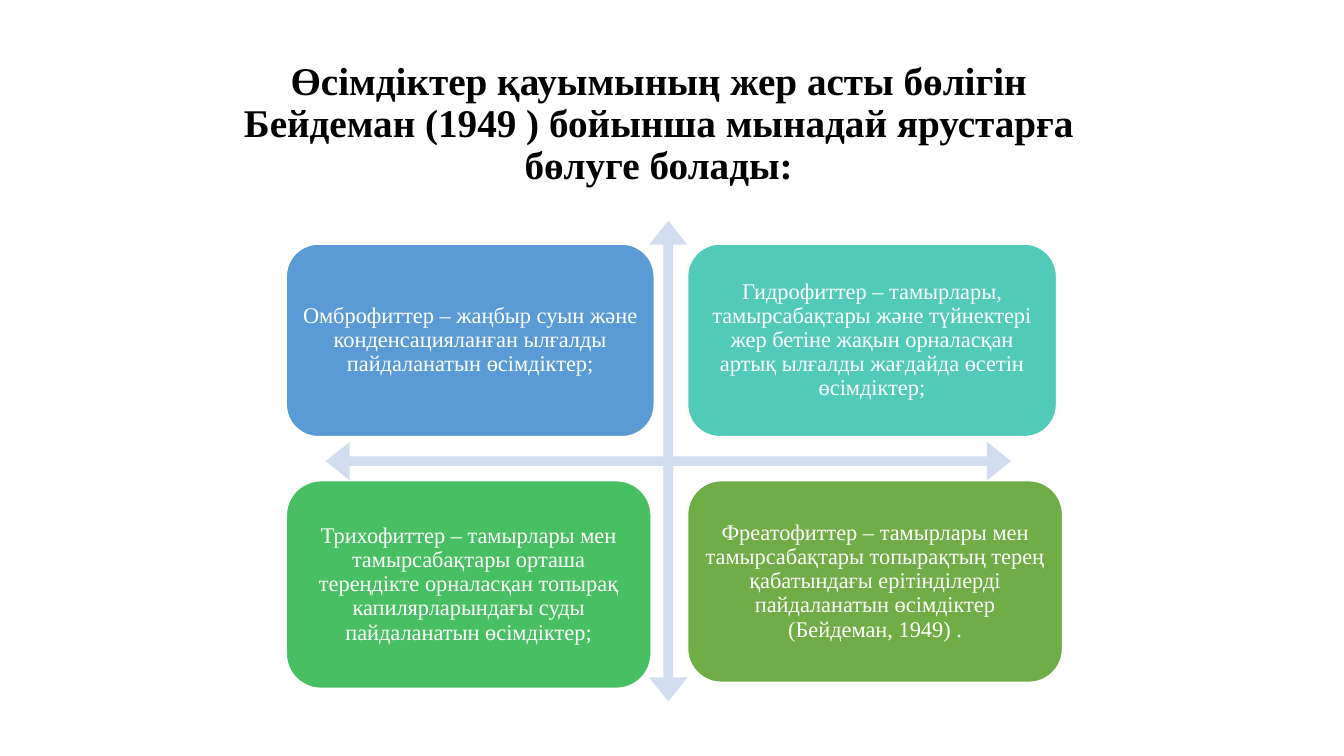
from pptx import Presentation
from pptx.dml.color import RGBColor
from pptx.enum import shapes, text
from pptx.util import Pt

WHITE = RGBColor(0xFF, 0xFF, 0xFF)
BLACK = RGBColor(0x00, 0x00, 0x00)
PALE = RGBColor(0xD2, 0xDE, 0xEF)
BLUE = RGBColor(0x5B, 0x9B, 0xD5)
TEAL = RGBColor(0x52, 0xCA, 0xB8)
GREEN = RGBColor(0x49, 0xBF, 0x64)
OLIVE = RGBColor(0x70, 0xAD, 0x47)

LEFT, RIGHT, TOP, BOTTOM = 204.5, 491.2, 174.4, 343.4
TITLE = ("Өсімдіктер қауымының жер асты бөлігін Бейдеман (1949 ) "
         "бойынша мынадай ярустарға бөлуге болады:")
TIERS = [
    (LEFT, TOP, 262.8, 137.5, BLUE,
     "Омброфиттер – жаңбыр суын және конденсацияланған ылғалды "
     "пайдаланатын өсімдіктер;"),
    (RIGHT, TOP, 263.5, 137.5, TEAL,
     "Гидрофиттер – тамырлары, тамырсабақтары және түйнектері жер бетіне "
     "жақын орналасқан артық ылғалды жағдайда өсетін өсімдіктер;"),
    (LEFT, BOTTOM, 260.6, 148.3, GREEN,
     "Трихофиттер – тамырлары мен тамырсабақтары орташа тереңдікте "
     "орналасқан топырақ капилярларындағы суды пайдаланатын өсімдіктер;"),
    (RIGHT, BOTTOM, 267.8, 144, OLIVE,
     "Фреатофиттер – тамырлары мен тамырсабақтары топырақтың терең "
     "қабатындағы ерітінділерді пайдаланатын өсімдіктер (Бейдеман, 1949) ."),
]


def set_attrs(target, values):
    for name, value in values.items():
        setattr(target, name, value)


def write(sp, words, size, color, bold, insets):
    tf = sp.text_frame
    left, top, right, bottom = map(Pt, insets)
    set_attrs(tf, {
        "word_wrap": True, "auto_size": text.MSO_AUTO_SIZE.NONE,
        "vertical_anchor": text.MSO_ANCHOR.MIDDLE,
        "margin_left": left, "margin_top": top,
        "margin_right": right, "margin_bottom": bottom,
    })
    p = tf.paragraphs[0]
    set_attrs(p, {"alignment": text.PP_ALIGN.CENTER, "line_spacing": 0.9})
    r = p.add_run()
    r.text = words
    set_attrs(r.font, {"name": "Times New Roman", "size": Pt(size), "bold": bold})
    r.font.color.rgb = color


def add_block(s, kind, box, fill):
    sp = s.shapes.add_shape(kind, *map(Pt, box))
    sp.shadow.inherit = False
    sp.fill.solid()
    sp.fill.fore_color.rgb = fill
    return sp


def add_title(s):
    sp = s.shapes.title
    set_attrs(sp, {"left": Pt(136.8), "top": Pt(44.6),
                   "width": Pt(667.4), "height": Pt(119.5)})
    write(sp, TITLE, 28, BLACK, True, (14, 3.6, 14, 34))


def add_axes(s):
    sp = add_block(s, shapes.MSO_SHAPE.QUAD_ARROW, (232.6, 157.7, 489.6, 343.4), PALE)
    sp.line.fill.background()
    for i, value in enumerate((0.02, 0.04, 0.05)):
        sp.adjustments[i] = value


def add_tier(s, left, top, width, height, fill, words):
    sp = add_block(s, shapes.MSO_SHAPE.ROUNDED_RECTANGLE,
                   (left, top, width, height), fill)
    sp.line.color.rgb = WHITE
    sp.line.width = Pt(1)
    write(sp, words, 16, WHITE, False, (4, 4, 4, 4))


def main():
    prs = Presentation()
    set_attrs(prs, {"slide_width": Pt(960), "slide_height": Pt(540)})
    s = prs.slides.add_slide(prs.slide_layouts[5])
    add_title(s)
    add_axes(s)
    for tier in TIERS:
        add_tier(s, *tier)
    prs.save("out.pptx")


if __name__ == "__main__":
    main()
